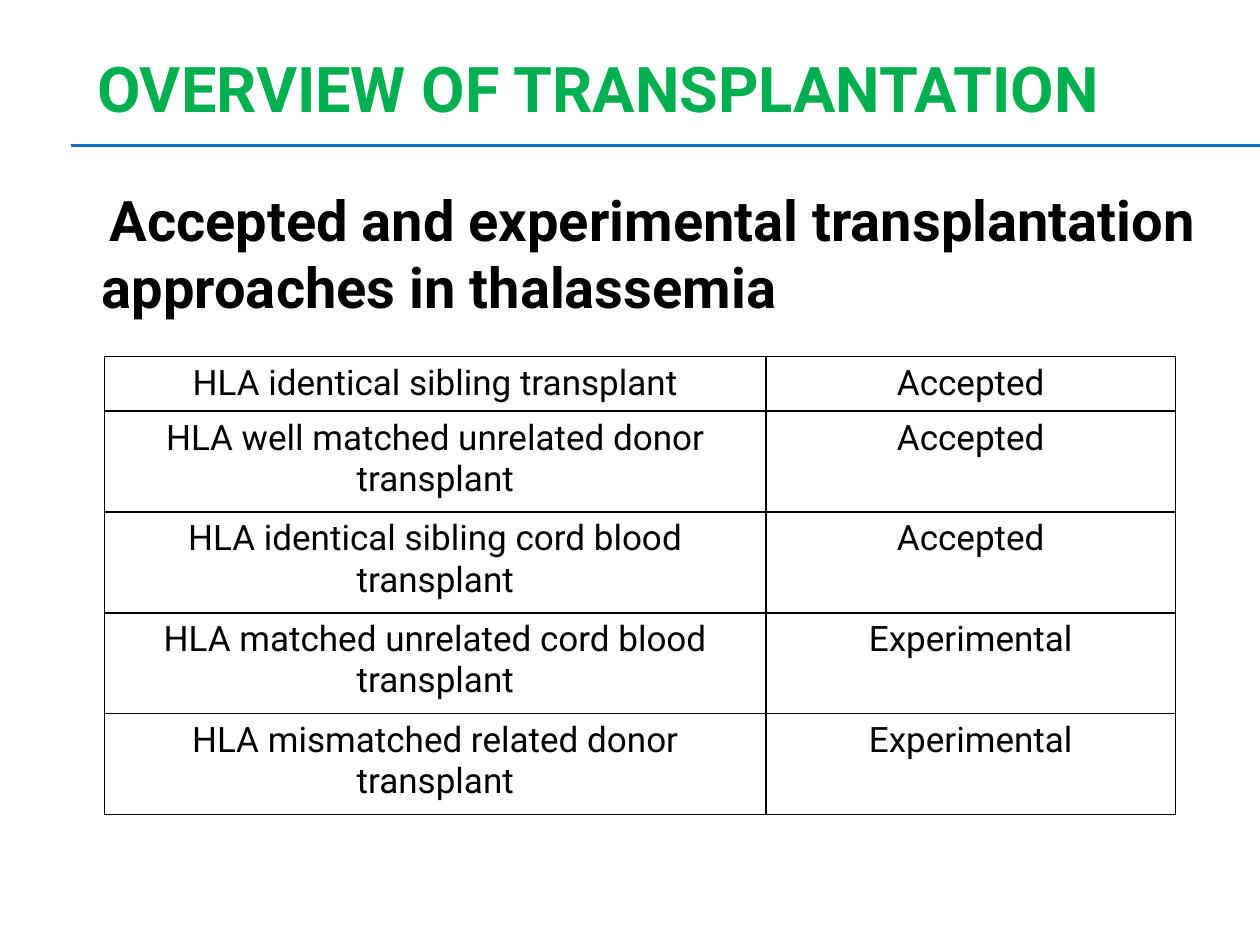
"""Build a slide on transplantation approaches in thalassemia."""
from lxml import etree
from pptx import Presentation
from pptx.dml.color import RGBColor
from pptx.enum.shapes import MSO_CONNECTOR
from pptx.enum.text import MSO_ANCHOR, MSO_AUTO_SIZE, PP_ALIGN
from pptx.oxml.ns import qn
from pptx.util import Inches, Pt

STRAIGHT = MSO_CONNECTOR.STRAIGHT
MIDDLE = MSO_ANCHOR.MIDDLE
NO_FIT = MSO_AUTO_SIZE.NONE
LEFT, CENTER = PP_ALIGN.LEFT, PP_ALIGN.CENTER

FONT = "Roboto"
BLACK, GREEN, BLUE = "000000", "00B050", "0F6FC6"
APPROACHES = [
    ("HLA identical sibling transplant", "Accepted"),
    ("HLA well matched unrelated donor transplant", "Accepted"),
    ("HLA identical sibling cord blood transplant", "Accepted"),
    ("HLA matched unrelated cord blood transplant", "Experimental"),
    ("HLA mismatched related donor transplant", "Experimental"),
]


def rgb(color):
    """Return a colour from a hex string."""
    return RGBColor.from_string(color)


def add_text(tf, text, size, color, bold=False, align=LEFT):
    """Write one run into the first paragraph and return the paragraph."""
    p = tf.paragraphs[0]
    p.alignment = align
    r = p.add_run()
    r.text = text
    r.font.name = FONT
    r.font.size = Pt(size)
    r.font.bold = bold
    r.font.color.rgb = rgb(color)
    return p


def add_title(s, text):
    """Place and fill the title placeholder."""
    sp = s.shapes.title
    sp.left, sp.top = Inches(0.67), Inches(0.33)
    sp.width, sp.height = Inches(8.25), Inches(0.72)
    tf = sp.text_frame
    tf.auto_size = NO_FIT
    tf.vertical_anchor = MIDDLE
    add_text(tf, text, 36, GREEN, bold=True)


def add_rule(s, y):
    """Draw a thin line that runs to the right edge of the slide."""
    line = s.shapes.add_connector(STRAIGHT, Inches(0.56), Inches(y), Inches(10), Inches(y))
    line.line.color.rgb = rgb(BLUE)
    line.line.width = Pt(0.75)
    etree.SubElement(line._element.spPr, qn("a:effectLst"))


def add_heading(s, text):
    """Add the heading with a slight first-line indent."""
    sp = s.shapes.add_textbox(Inches(0.71), Inches(1.42), Inches(9.12), Inches(1.3))
    tf = sp.text_frame
    tf.word_wrap = True
    p = add_text(tf, text, 32, BLACK, bold=True)
    p._p.get_or_add_pPr().set("indent", str(Inches(0.06)))


def set_borders(cell):
    """Give a cell a black line on every side."""
    tc_pr = cell._tc.get_or_add_tcPr()
    for i, side in enumerate(("lnL", "lnR", "lnT", "lnB")):
        ln = etree.Element(qn(f"a:{side}"), w=str(Pt(1)))
        fill = etree.SubElement(ln, qn("a:solidFill"))
        etree.SubElement(fill, qn("a:srgbClr"), val=BLACK)
        tc_pr.insert(i, ln)


def add_approach_table(s):
    """Add the table of approaches and their status."""
    frame = s.shapes.add_table(
        len(APPROACHES), 2, Inches(0.83), Inches(2.83), Inches(8.5), Inches(3.63))
    table = frame.table
    table.first_row = table.horz_banding = False
    for column, width in zip(table.columns, (5.25, 3.25)):
        column.width = Inches(width)
    for i, (row, texts) in enumerate(zip(table.rows, APPROACHES)):
        row.height = Inches(0.8 if i else 0.43)
        for cell, text in zip(row.cells, texts):
            cell.fill.background()
            set_borders(cell)
            add_text(cell.text_frame, text, 20, BLACK, align=CENTER)


def main():
    """Build and save the slide."""
    prs = Presentation()
    prs.slide_width, prs.slide_height = Inches(10), Inches(7.5)
    s = prs.slides.add_slide(prs.slide_layouts[5])
    for y in (1.15, 1.16):
        add_rule(s, y)
    add_title(s, "OVERVIEW OF TRANSPLANTATION")
    add_heading(s, "Accepted and experimental transplantation approaches in thalassemia")
    add_approach_table(s)
    prs.save("out.pptx")


if __name__ == "__main__":
    main()
